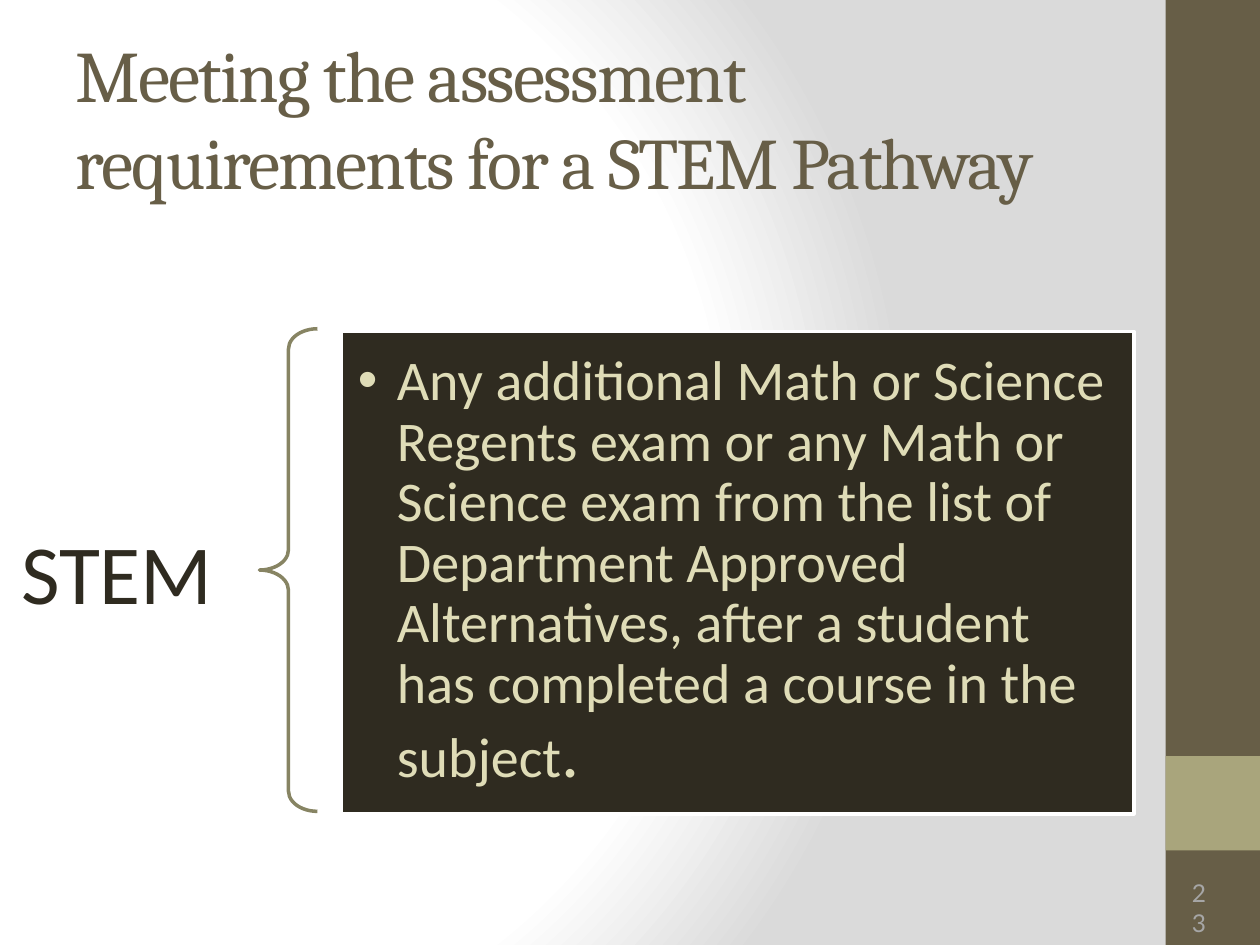
"""Build the slide on the assessment requirements for a STEM pathway."""
from pptx import Presentation
from pptx.dml.color import RGBColor
from pptx.enum.shapes import MSO_SHAPE as Shape
from pptx.enum.text import MSO_ANCHOR as Anchor, MSO_AUTO_SIZE as AutoSize, PP_ALIGN as Align
from pptx.oxml import parse_xml
from pptx.oxml.ns import nsdecls, qn
from pptx.util import Inches, Pt

COLUMN = ROW = 0.25
COLORS = {
    "white": "FFFFFF", "shade": "DADADA", "band": "675E47", "accent": "A9A57C",
    "brace": "878463", "dark": "2F2B20", "cream": "DFDCB7", "number": "A6A6A6",
}
REQUIREMENT = (
    "Any additional Math or Science Regents exam or any Math or Science exam "
    "from the list of Department Approved Alternatives, after a student has "
    "completed a course in the subject"
)


def color(name):
    return RGBColor.from_string(COLORS[name])


def cells(left, top, width, height):
    return [Inches(left * COLUMN), Inches(top * ROW), Inches(width * COLUMN), Inches(height * ROW)]


def place(shape, *box):
    shape.left, shape.top, shape.width, shape.height = cells(*box)


def set_background(slide):
    slide.background.fill.gradient()
    gradient = slide.element.find(".//" + qn("a:gradFill"))
    stops = "".join(
        f'<a:gs pos="{share * 1000}"><a:srgbClr val="{COLORS[name]}"/></a:gs>'
        for share, name in ((0, "white"), (75, "white"), (100, "shade"))
    )
    gradient.getparent().replace(gradient, parse_xml(
        f'<a:gradFill {nsdecls("a")} rotWithShape="1"><a:gsLst>{stops}</a:gsLst>'
        '<a:path path="circle"><a:fillToRect l="20000" t="50000" r="100000" b="50000"/>'
        '</a:path></a:gradFill>'
    ))


def set_line(shape, name):
    shape.line.color.rgb = color(name)
    shape.line.width = Pt(2)


def add_block(slide, box, fill):
    block = slide.shapes.add_shape(Shape.RECTANGLE, *cells(*box))
    block.shadow.inherit = False
    block.fill.solid()
    block.fill.fore_color.rgb = color(fill)
    block.line.fill.background()


def add_brace(slide, box):
    brace = slide.shapes.add_shape(Shape.LEFT_BRACE, *cells(*box))
    brace.shadow.inherit = False
    brace.adjustments[0] = 0.35
    brace.fill.background()
    set_line(brace, "brace")


def set_frame(shape, anchor, side=0.1, end=0.05):
    frame = shape.text_frame
    frame.word_wrap = True
    frame.auto_size = AutoSize.NONE
    frame.vertical_anchor = anchor
    frame.margin_left = frame.margin_right = Inches(side)
    frame.margin_top = frame.margin_bottom = Inches(end)
    return frame


def format_run(run, font, size, name):
    run.font.name = font
    run.font.size = Pt(size)
    run.font.color.rgb = color(name)


def add_label(slide, box, text, font, size, name, anchor, **margins):
    label = slide.shapes.add_textbox(*cells(*box))
    paragraph = set_frame(label, anchor, **margins).paragraphs[0]
    paragraph.text = text
    paragraph.alignment = Align.RIGHT
    format_run(paragraph.runs[0], font, size, name)


def fill_title(title, text):
    place(title, 2, 1.2, 33.3, 5)
    paragraph = set_frame(title, Anchor.MIDDLE).paragraphs[0]
    paragraph.text = text
    paragraph.alignment = Align.LEFT
    run = paragraph.runs[0]
    format_run(run, "Cambria", 41.4, "band")
    run.font._element.set("spc", "-100")


def fill_body(body, text):
    place(body, 10.84, 10.52, 25.16, 15.32)
    body.fill.solid()
    body.fill.fore_color.rgb = color("dark")
    set_line(body, "white")
    paragraph = set_frame(body, Anchor.MIDDLE, 0.13, 0.13).paragraphs[0]
    paragraph.text = text
    paragraph.line_spacing = 0.9
    paragraph.space_before = Pt(0)
    properties = paragraph._p.get_or_add_pPr()
    properties.set("marL", str(Inches(0.31)))
    properties.set("indent", str(-Inches(0.31)))
    paragraph.add_run().text = "."
    for run, size in zip(paragraph.runs, (32, 41)):
        format_run(run, "Calibri", size, "cream")


def main():
    presentation = Presentation()
    presentation.slide_width, presentation.slide_height = Inches(10), Inches(7.5)
    slide = presentation.slides.add_slide(presentation.slide_layouts[1])
    set_background(slide)
    add_block(slide, (37, 0, 3, 30), "band")
    add_block(slide, (37, 24, 3, 3), "accent")
    fill_title(slide.shapes.title, "Meeting the assessment requirements for a STEM Pathway")
    add_label(slide, (-1, 16.04, 9.24, 4.16), "STEM", "Calibri", 48, "dark",
              Anchor.MIDDLE, side=0.37, end=0.13)
    add_brace(slide, (8.24, 10.44, 1.84, 15.32))
    fill_body(slide.placeholders[1], REQUIREMENT)
    add_label(slide, (37, 27.68, 1.68, 1.36), "23", "Lato", 14, "number", Anchor.TOP)
    presentation.save("out.pptx")


if __name__ == "__main__":
    main()
